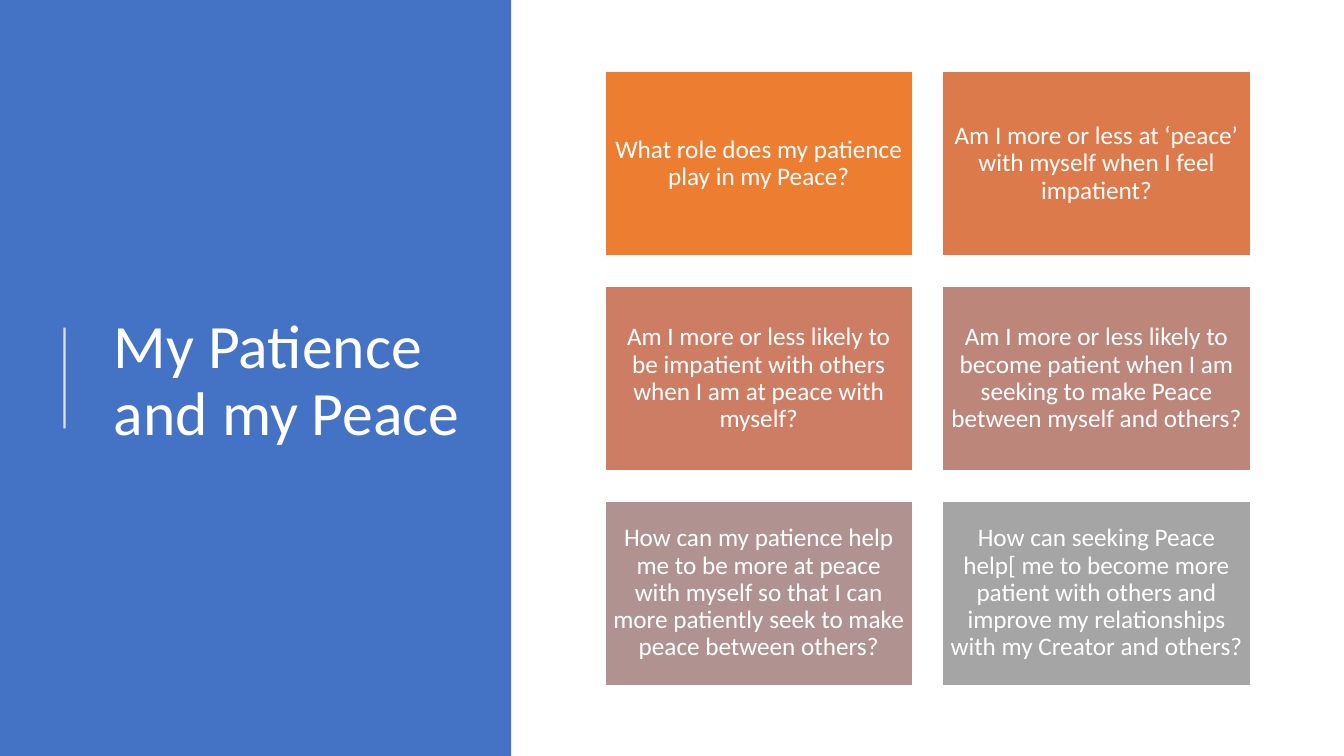
from dataclasses import dataclass

from lxml import etree
from pptx import Presentation
from pptx.dml.color import RGBColor
from pptx.enum.shapes import MSO_CONNECTOR, MSO_SHAPE
from pptx.enum.text import MSO_ANCHOR, PP_ALIGN
from pptx.oxml.ns import qn
from pptx.util import Inches, Pt

RECT = MSO_SHAPE.RECTANGLE
STRAIGHT = MSO_CONNECTOR.STRAIGHT
MIDDLE = MSO_ANCHOR.MIDDLE
LEFT, CENTER = PP_ALIGN.LEFT, PP_ALIGN.CENTER
TITLE_ONLY = 5

FONT = "Calibri"
COLORS = {
    "panel": "4472C4",
    "white": "FFFFFF",
    "orange": "ED7D31",
    "copper": "DC7A4B",
    "clay": "CC7D64",
    "rose": "BD867B",
    "mauve": "B09391",
    "gray": "A5A5A5",
}

# Card grid
COLUMNS = 2
GRID_LEFT, GRID_TOP = 6.0, 0.71
CARD_W, CARD_H = 3.05, 1.83
STEP_X, STEP_Y = 3.35, 2.13


@dataclass
class Card:
    text: str
    color: str


CARDS = [
    Card("What role does my patience play in my Peace?", "orange"),
    Card("Am I more or less at ‘peace’ with myself when I feel impatient?", "copper"),
    Card("Am I more or less likely to be impatient with others when I am "
         "at peace with myself?", "clay"),
    Card("Am I more or less likely to become patient when I am seeking to "
         "make Peace between myself and others?", "rose"),
    Card("How can my patience help me to be more at peace with myself so that "
         "I can more patiently seek to make peace between others?", "mauve"),
    Card("How can seeking Peace help[ me to become more patient with others and "
         "improve my relationships with my Creator and others?", "gray"),
]


def rgb(name: str) -> RGBColor:
    return RGBColor.from_string(COLORS[name])


def write(tf, text: str, size: int, align) -> None:
    tf.word_wrap = True
    tf.vertical_anchor = MIDDLE
    p = tf.paragraphs[0]
    p.alignment = align
    p.line_spacing = 0.9
    r = p.add_run()
    r.text = text
    r.font.name = FONT
    r.font.size = Pt(size)
    r.font.color.rgb = rgb("white")


def add_rect(s, left: float, top: float, width: float, height: float, color: str):
    sp = s.shapes.add_shape(RECT, Inches(left), Inches(top), Inches(width), Inches(height))
    sp.shadow.inherit = False
    sp.fill.solid()
    sp.fill.fore_color.rgb = rgb(color)
    sp.line.fill.background()
    return sp


def add_panel(s) -> None:
    panel = add_rect(s, 0, 0, 5.07, 7.5, "panel")
    # Send the panel behind the title
    s.shapes._spTree.insert(2, panel._element)


def add_title(s, text: str) -> None:
    title = s.shapes.title
    title.left, title.top = Inches(1.03), Inches(0.78)
    title.width, title.height = Inches(3.69), Inches(6.02)
    write(title.text_frame, text, 44, LEFT)


def add_accent_line(s) -> None:
    line = s.shapes.add_connector(
        STRAIGHT, Inches(0.64), Inches(4.25), Inches(0.64), Inches(3.25))
    line.line.color.rgb = rgb("white")
    line.line.width = Pt(1.5)
    # Slight transparency, no shadow
    sp_pr = line._element.spPr
    color = sp_pr.find(".//" + qn("a:srgbClr"))
    etree.SubElement(color, qn("a:alpha"), val="80000")
    etree.SubElement(sp_pr, qn("a:effectLst"))


def add_card(s, card: Card, index: int) -> None:
    row, col = divmod(index, COLUMNS)
    sp = add_rect(s, GRID_LEFT + col * STEP_X, GRID_TOP + row * STEP_Y,
                  CARD_W, CARD_H, card.color)
    sp.line.color.rgb = rgb("white")
    sp.line.width = Pt(1)
    tf = sp.text_frame
    tf.margin_left = tf.margin_right = tf.margin_top = tf.margin_bottom = Inches(0.07)
    write(tf, card.text, 18, CENTER)


def main() -> None:
    prs = Presentation()
    prs.slide_width, prs.slide_height = Inches(13.33), Inches(7.5)
    s = prs.slides.add_slide(prs.slide_layouts[TITLE_ONLY])

    # Left side
    add_panel(s)
    add_title(s, "My Patience and my Peace")
    add_accent_line(s)

    # Questions
    for index, card in enumerate(CARDS):
        add_card(s, card, index)

    prs.save("out.pptx")


if __name__ == "__main__":
    main()
